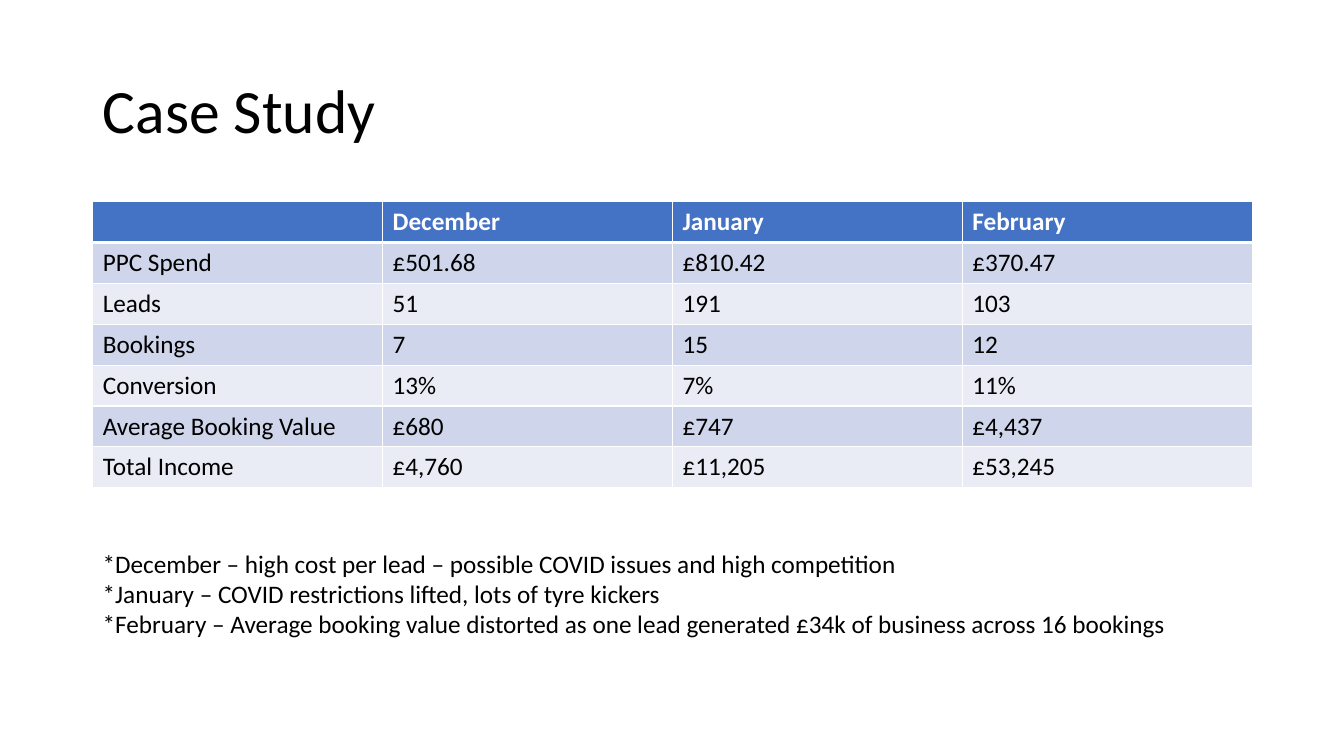
from lxml import etree
from pptx import Presentation
from pptx.dml.color import RGBColor
from pptx.enum.text import MSO_ANCHOR, MSO_AUTO_SIZE, PP_ALIGN
from pptx.oxml.ns import qn
from pptx.util import Inches, Pt

MIDDLE = MSO_ANCHOR.MIDDLE
NO_FIT, GROW = MSO_AUTO_SIZE.NONE, MSO_AUTO_SIZE.SHAPE_TO_FIT_TEXT
LEFT = PP_ALIGN.LEFT

FONT = "Calibri"
BLACK = RGBColor(0x00, 0x00, 0x00)
WHITE = RGBColor(0xFF, 0xFF, 0xFF)
HEADER_BLUE = RGBColor(0x44, 0x72, 0xC4)
BANDS = (RGBColor(0xE9, 0xEB, 0xF5), RGBColor(0xCF, 0xD5, 0xEA))

RESULTS = [
    ("", "December", "January", "February"),
    ("PPC Spend", "£501.68", "£810.42", "£370.47"),
    ("Leads", "51", "191", "103"),
    ("Bookings", "7", "15", "12"),
    ("Conversion", "13%", "7%", "11%"),
    ("Average Booking Value", "£680", "£747", "£4,437"),
    ("Total Income", "£4,760", "£11,205", "£53,245"),
]
NOTES = [
    "*December – high cost per lead – possible COVID issues and high competition",
    "*January – COVID restrictions lifted, lots of tyre kickers",
    "*February – Average booking value distorted as one lead generated "
    "£34k of business across 16 bookings",
]


def format_text(frame, size, color, bold=False):
    for paragraph in frame.paragraphs:
        paragraph.alignment = LEFT
        for font in [paragraph.font] + [run.font for run in paragraph.runs]:
            font.name, font.size, font.bold = FONT, Pt(size), bold
            font.color.rgb = color


def add_title(slide, box, text):
    title = slide.shapes.title
    title.left, title.top, title.width, title.height = map(Inches, box)
    frame = title.text_frame
    frame.text = text
    frame.vertical_anchor = MIDDLE
    frame.auto_size = NO_FIT
    frame.paragraphs[0].line_spacing = 0.9
    format_text(frame, 44, BLACK)


def add_borders(cell, top, bottom):
    """Draw white cell edges; top and bottom are widths in points."""
    properties = cell._tc.get_or_add_tcPr()
    for side, width in (("L", 1), ("R", 1), ("T", top), ("B", bottom)):
        line = etree.SubElement(properties, qn(f"a:ln{side}"), w=str(Pt(width)))
        fill = etree.SubElement(line, qn("a:solidFill"))
        etree.SubElement(fill, qn("a:srgbClr"), val=str(WHITE))


def add_results_table(slide, box, rows):
    table = slide.shapes.add_table(len(rows), len(rows[0]), *map(Inches, box)).table
    for r, row in enumerate(rows):
        is_header = r == 0
        for c, value in enumerate(row):
            cell = table.cell(r, c)
            cell.text_frame.text = value
            format_text(cell.text_frame, 18, WHITE if is_header else BLACK, is_header)
            add_borders(cell, 3 if r == 1 else 1, 3 if is_header else 1)
            cell.fill.solid()
            cell.fill.fore_color.rgb = HEADER_BLUE if is_header else BANDS[r % 2]


def add_notes(slide, box, lines):
    frame = slide.shapes.add_textbox(*map(Inches, box)).text_frame
    frame.word_wrap = True
    frame.auto_size = GROW
    frame.text = "\n".join(lines)
    format_text(frame, 18, BLACK)


def main():
    deck = Presentation()
    deck.slide_width, deck.slide_height = Inches(13.33), Inches(7.5)
    title_only = deck.slide_layouts[5]
    slide = deck.slides.add_slide(title_only)
    left, width = 0.92, 11.5
    add_title(slide, (left, 0.4, width, 1.45), "Case Study")
    add_results_table(slide, (left, 2, width, 2.84), RESULTS)
    add_notes(slide, (left, 5.39, width, 1.01), NOTES)
    deck.save("out.pptx")


if __name__ == "__main__":
    main()
